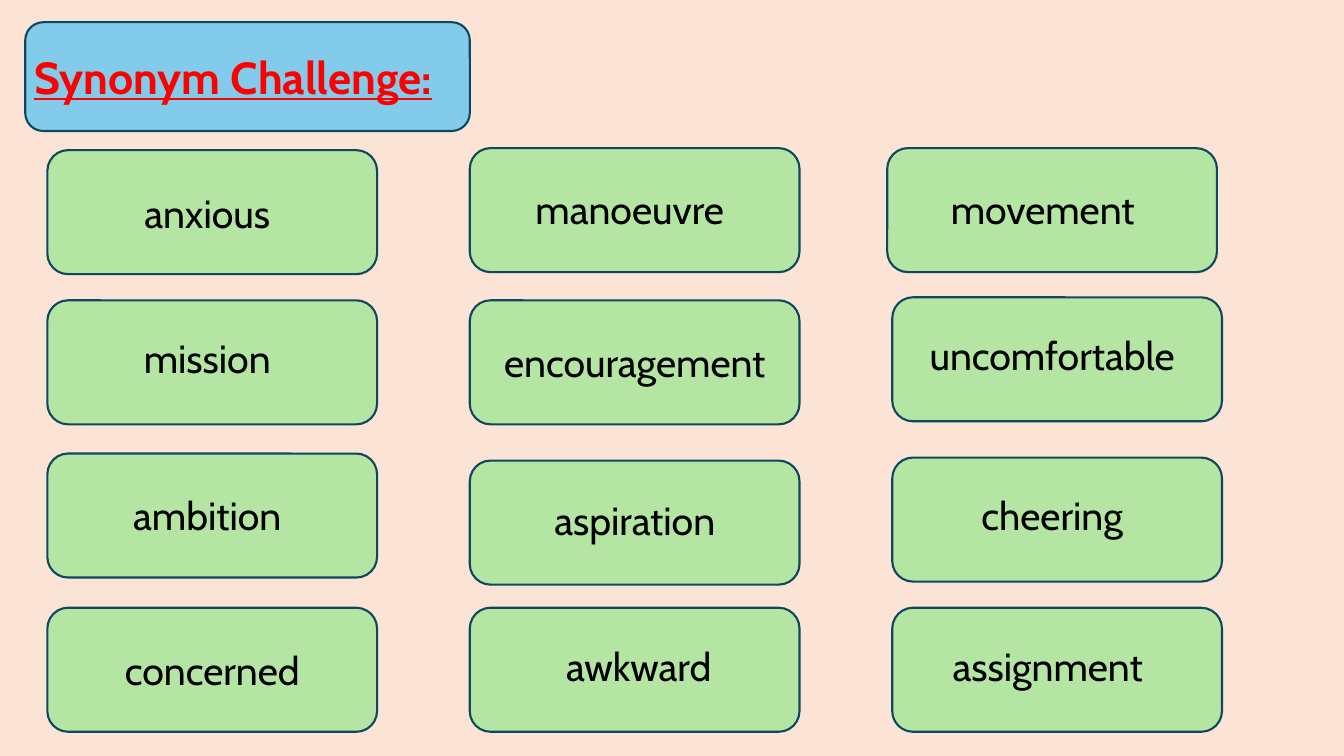
from pptx import Presentation
from pptx.dml.color import RGBColor
from pptx.enum import shapes, text
from pptx.util import Inches, Pt

PEACH = RGBColor(0xFB, 0xE3, 0xD6)
BLUE = RGBColor(0x83, 0xCB, 0xEB)
GREEN = RGBColor(0xB4, 0xE5, 0xA2)
NAVY = RGBColor(0x10, 0x47, 0x60)
RED = RGBColor(0xFF, 0x00, 0x00)
BLACK = RGBColor(0x00, 0x00, 0x00)

TITLE_FONT = {"name": "Cabin", "size": Pt(32), "bold": True, "underline": True}
WORD_FONT = {"name": "Cabin", "size": Pt(28)}

CARD_WIDTH, CARD_HEIGHT = 3.27, 1.23
FIRST_LEFT, COLUMN_STEP = 0.47, 4.19

# Each column lists: word, card top, label offset from the card (right, down)
COLUMNS = [
    [("anxious", 1.49, 0.13, 0.34), ("mission", 2.98, 0.13, 0.29),
     ("ambition", 4.5, 0.13, 0.33), ("concerned", 6.03, 0.18, 0.33)],
    [("manoeuvre", 1.47, 0.13, 0.32), ("encouragement", 2.98, 0.18, 0.33),
     ("aspiration", 4.57, 0.18, 0.3), ("awkward", 6.03, 0.22, 0.29)],
    [("movement ", 1.47, 0.13, 0.32), ("uncomfortable", 2.95, 0.13, 0.29),
     ("cheering", 4.54, 0.13, 0.29), ("assignment ", 6.03, 0.13, 0.29)],
]
LEFT_NUDGES = {"movement ": -0.05}


def add_panel(slide, left, top, width, height, fill):
    panel = slide.shapes.add_shape(
        shapes.MSO_SHAPE.ROUNDED_RECTANGLE,
        Inches(left), Inches(top), Inches(width), Inches(height))
    panel.shadow.inherit = False
    panel.fill.solid()
    panel.fill.fore_color.rgb = fill
    panel.line.color.rgb = NAVY
    panel.line.width = Pt(1.5)
    return panel


def write_text(shape, wording, font_values, color, alignment):
    frame = shape.text_frame
    frame.word_wrap = True
    frame.auto_size = text.MSO_AUTO_SIZE.SHAPE_TO_FIT_TEXT
    frame.vertical_anchor = text.MSO_ANCHOR.TOP
    paragraph = frame.paragraphs[0]
    paragraph.alignment = alignment
    run = paragraph.add_run()
    run.text = wording
    for name, value in font_values.items():
        setattr(run.font, name, value)
    run.font.color.rgb = color


def add_heading(slide, left, top, width, height):
    panel = add_panel(slide, left, top, width, height, BLUE)
    title = slide.shapes.title
    title.left, title.top = Inches(left - 0.01), Inches(top + 0.22)
    title.width, title.height = Inches(4.68), Inches(0.64)
    write_text(title, "Synonym Challenge:", TITLE_FONT, RED, text.PP_ALIGN.LEFT)
    panel.element.addnext(title.element)  # bring the title in front of its panel


def add_word_card(slide, left, top, word, right, down):
    add_panel(slide, left, top, CARD_WIDTH, CARD_HEIGHT, GREEN)
    label = slide.shapes.add_textbox(
        Inches(left + right), Inches(top + down), Inches(2.91), Inches(0.57))
    write_text(label, word, WORD_FONT, BLACK, text.PP_ALIGN.CENTER)


def add_word_grid(slide, left, column_step):
    for column, cards in enumerate(COLUMNS):
        for word, top, right, down in cards:
            card_left = left + column * column_step + LEFT_NUDGES.get(word, 0)
            add_word_card(slide, card_left, top, word, right, down)


def main():
    presentation = Presentation()
    presentation.slide_width = Inches(13.33)
    presentation.slide_height = Inches(7.5)
    slide = presentation.slides.add_slide(presentation.slide_layouts[5])
    slide.background.fill.solid()
    slide.background.fill.fore_color.rgb = PEACH
    add_heading(slide, 0.25, 0.22, 4.41, 1.08)
    add_word_grid(slide, FIRST_LEFT, COLUMN_STEP)
    presentation.save("out.pptx")


if __name__ == "__main__":
    main()
